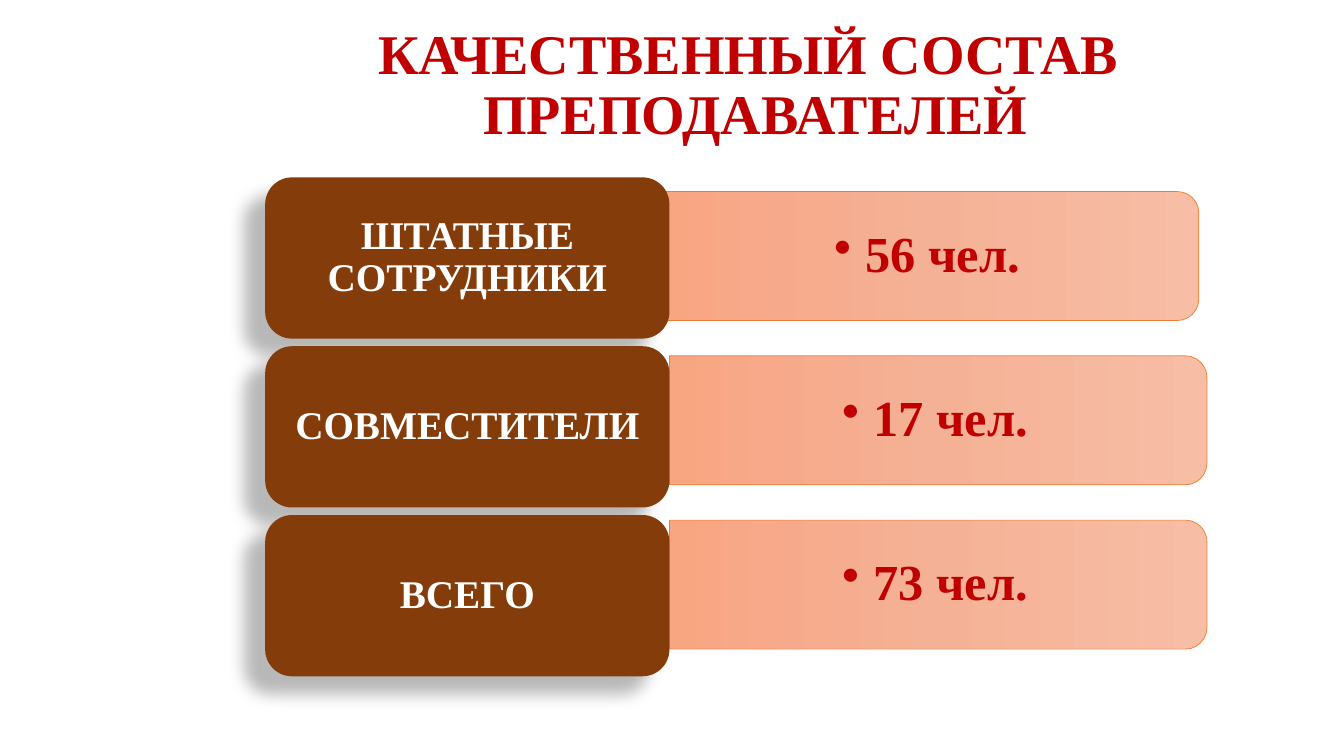
from dataclasses import dataclass

from lxml import etree
from pptx import Presentation
from pptx.dml.color import RGBColor
from pptx.enum.shapes import MSO_SHAPE
from pptx.enum.text import MSO_ANCHOR, PP_ALIGN
from pptx.oxml import parse_xml
from pptx.oxml.ns import qn
from pptx.shapes.autoshape import Shape
from pptx.slide import Slide
from pptx.util import Inches, Pt

ROUNDED = MSO_SHAPE.ROUNDED_RECTANGLE
ROUND_TOP = MSO_SHAPE.ROUND_2_SAME_RECTANGLE
MIDDLE = MSO_ANCHOR.MIDDLE
CENTER = PP_ALIGN.CENTER
DRAWING_NS = "http://schemas.openxmlformats.org/drawingml/2006/main"


@dataclass(frozen=True)
class Theme:
    font: str = "Times New Roman"
    accent: str = "C00000"
    label_fill: str = "843C0B"
    label_text: str = "FFFFFF"
    bar_line: str = "ED7D31"
    bar_stops: tuple[str, ...] = ("F7BDA5", "F5B196", "F8A582")
    shadow: str = "000000"
    title_size: int = 40
    value_size: int = 36
    label_size: int = 28


@dataclass(frozen=True)
class StaffRow:
    label: str
    value: str
    bar_left: float


THEME = Theme()
ROWS = (
    StaffRow("ШТАТНЫЕ СОТРУДНИКИ", "56 чел.", 6.56),
    StaffRow("СОВМЕСТИТЕЛИ", "17 чел.", 6.64),
    StaffRow("ВСЕГО", "73 чел.", 6.64),
)

# Lengths in inches
LABEL_LEFT, LABEL_TOP, LABEL_WIDTH, LABEL_HEIGHT, LABEL_PITCH = 2.63, 1.76, 4.01, 1.6, 1.675
BAR_TOP, BAR_WIDTH, BAR_HEIGHT, BAR_PITCH = 1.9, 5.33, 1.28, 1.63
VALUE_WIDTH, VALUE_HEIGHT = 5.27, 1.15
BULLET_INDENT = 0.31


def write_text(box: Shape, text: str, size: int, color: str,
               margin_x: float = 0.1, margin_y: float = 0.05, bullet: bool = False) -> None:
    """Fill a box with one bold centred paragraph."""
    frame = box.text_frame
    frame.word_wrap = True
    frame.vertical_anchor = MIDDLE
    frame.margin_left = frame.margin_right = Inches(margin_x)
    frame.margin_top = frame.margin_bottom = Inches(margin_y)
    frame.text = text
    para = frame.paragraphs[0]
    para.alignment = CENTER
    para.line_spacing = 0.9
    if bullet:
        properties = para._p.get_or_add_pPr()
        properties.set("marL", str(Inches(BULLET_INDENT)))
        properties.set("indent", str(-Inches(BULLET_INDENT)))
        etree.SubElement(properties, qn("a:buChar"), char="•")
    for span in para.runs:
        span.font.name = THEME.font
        span.font.size = Pt(size)
        span.font.bold = True
        span.font.color.rgb = RGBColor.from_string(color)


def add_title(page: Slide, text: str) -> None:
    box = page.shapes.add_textbox(Inches(1.49), Inches(0.23), Inches(12), Inches(1.25))
    write_text(box, text, THEME.title_size, THEME.accent)


def apply_bar_gradient(bar: Shape) -> None:
    """Spread the theme's stops evenly over the bar."""
    bar.fill.gradient()
    bar.fill.gradient_angle = 270
    stop_list = bar._element.spPr.find(qn("a:gradFill")).find(qn("a:gsLst"))
    for stop in list(stop_list):
        stop_list.remove(stop)
    step = 100000 // (len(THEME.bar_stops) - 1)
    for index, color in enumerate(THEME.bar_stops):
        stop = etree.SubElement(stop_list, qn("a:gs"), pos=str(index * step))
        etree.SubElement(stop, qn("a:srgbClr"), val=color)


def add_value_bar(page: Slide, row: StaffRow, top: float) -> None:
    # The bar is an upright shape turned a quarter about its centre
    shift = (BAR_WIDTH - BAR_HEIGHT) / 2
    bar = page.shapes.add_shape(ROUND_TOP, Inches(row.bar_left + shift), Inches(top - shift),
                                Inches(BAR_HEIGHT), Inches(BAR_WIDTH))
    bar.rotation = 90
    bar.shadow.inherit = False
    apply_bar_gradient(bar)
    bar.line.color.rgb = RGBColor.from_string(THEME.bar_line)
    bar.line.width = Pt(0.5)

    value_top = top + (BAR_HEIGHT - VALUE_HEIGHT) / 2
    box = page.shapes.add_textbox(Inches(row.bar_left), Inches(value_top),
                                  Inches(VALUE_WIDTH), Inches(VALUE_HEIGHT))
    write_text(box, row.value, THEME.value_size, THEME.accent, 0.27, 0.14, bullet=True)


def add_label(page: Slide, text: str, top: float) -> None:
    card = page.shapes.add_shape(ROUNDED, Inches(LABEL_LEFT), Inches(top),
                                 Inches(LABEL_WIDTH), Inches(LABEL_HEIGHT))
    card.fill.solid()
    card.fill.fore_color.rgb = RGBColor.from_string(THEME.label_fill)
    card.line.fill.background()
    card.shadow.inherit = False
    card._element.spPr.find(qn("a:effectLst")).append(parse_xml(
        f'<a:outerShdw xmlns:a="{DRAWING_NS}" blurRad="{Pt(11.8)}" dist="{Pt(19.7)}" '
        f'dir="{141 * 60000}" algn="ctr" rotWithShape="0">'
        f'<a:srgbClr val="{THEME.shadow}"><a:alpha val="28000"/></a:srgbClr></a:outerShdw>'))
    write_text(card, text, THEME.label_size, THEME.label_text, 0.12, 0.06)


def main() -> None:
    deck = Presentation()
    deck.slide_width, deck.slide_height = Inches(13.33), Inches(7.5)
    page = deck.slides.add_slide(deck.slide_layouts[6])

    add_title(page, "КАЧЕСТВЕННЫЙ СОСТАВ \vПРЕПОДАВАТЕЛЕЙ")

    # Staff rows: value bar behind, label card in front
    for index, row in enumerate(ROWS):
        add_value_bar(page, row, BAR_TOP + index * BAR_PITCH)
        add_label(page, row.label, LABEL_TOP + index * LABEL_PITCH)

    deck.save("out.pptx")


if __name__ == "__main__":
    main()
